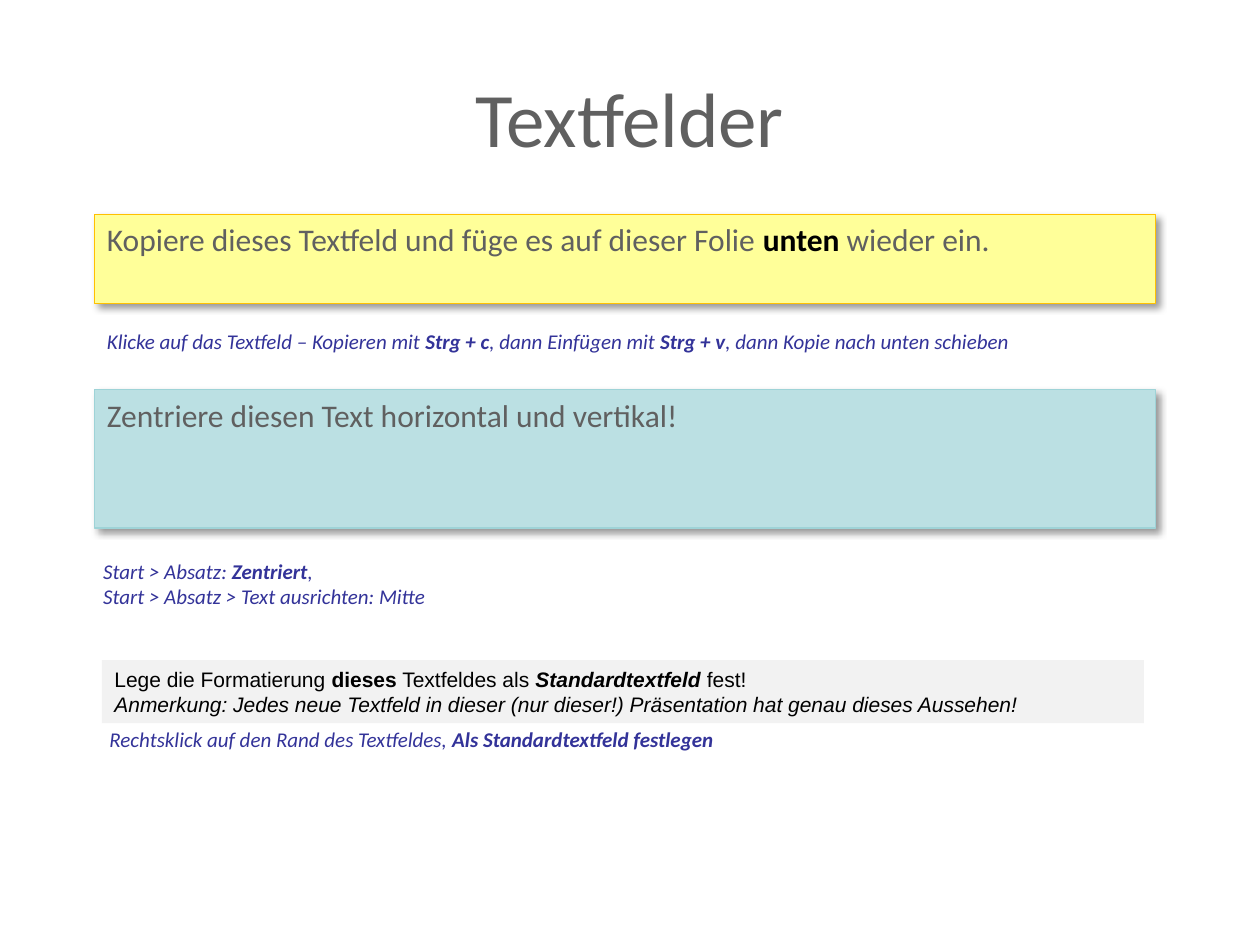
"""Builds the German exercise slide about text boxes."""
from dataclasses import dataclass

from lxml import etree
from pptx import Presentation
from pptx.dml.color import RGBColor
from pptx.enum.shapes import MSO_SHAPE
from pptx.enum.text import MSO_ANCHOR, PP_ALIGN
from pptx.oxml import parse_xml
from pptx.oxml.ns import nsdecls
from pptx.util import Inches, Pt

RECTANGLE = MSO_SHAPE.RECTANGLE
TOP, MIDDLE = MSO_ANCHOR.TOP, MSO_ANCHOR.MIDDLE
LEFT, CENTER = PP_ALIGN.LEFT, PP_ALIGN.CENTER
TITLE_ONLY = 5
COLUMNS, ROWS = 100, 75


@dataclass(frozen=True)
class Theme:
    """Colours, fonts and type sizes of the slide."""
    heading_font: str = "Calibri"
    plain_font: str = "Arial"
    title_size: int = 44
    task_size: int = 18
    hint_size: int = 12
    gray: str = "606060"
    black: str = "000000"
    hint: str = "333399"
    yellow: str = "FFFF99"
    amber: str = "FFC000"
    aqua: str = "BBE0E3"
    teal: str = "9ED3D7"
    pale: str = "F2F2F2"


class SlideBuilder:
    """Holds the theme and the current page and adds elements on a grid."""

    def __init__(self, deck, theme):
        """Open a page that has only a title."""
        self.deck, self.theme = deck, theme
        self.page = deck.slides.add_slide(deck.slide_layouts[TITLE_ONLY])

    def area(self, column, row, columns, rows):
        """Turn grid units into slide lengths."""
        cell_width = self.deck.slide_width / COLUMNS
        cell_height = self.deck.slide_height / ROWS
        return (round(column * cell_width), round(row * cell_height),
                round(columns * cell_width), round(rows * cell_height))

    def fill_text(self, box, spans, size, color, font=None, italic=False,
                  align=LEFT, anchor=TOP, strong_color=None):
        """Fill one paragraph with (text, style) spans; b is bold, i italic."""
        frame = box.text_frame
        frame.word_wrap, frame.vertical_anchor = True, anchor
        para = frame.paragraphs[0]
        para.alignment = align
        para.font.size, para.font.italic = Pt(size), italic
        para.font.name = font or self.theme.heading_font
        para.font.color.rgb = RGBColor.from_string(color)
        for text, style in spans:
            if text == "\n":
                para.add_line_break()
                continue
            span = para.add_run()
            span.text = text
            if "b" in style:
                span.font.bold = True
                if strong_color:
                    span.font.color.rgb = RGBColor.from_string(strong_color)
            if "i" in style:
                span.font.italic = True

    def title(self, area, text):
        """Place and format the title placeholder."""
        box = self.page.shapes.title
        box.left, box.top, box.width, box.height = self.area(*area)
        self.fill_text(box, [(text, "")], self.theme.title_size, self.theme.gray,
                       align=CENTER, anchor=MIDDLE)

    def panel(self, area, fill, line=None):
        """Add a filled rectangle, outlined if a line colour is given."""
        box = self.page.shapes.add_shape(RECTANGLE, *self.area(*area))
        box.shadow.inherit = False
        box.fill.solid()
        box.fill.fore_color.rgb = RGBColor.from_string(fill)
        if line:
            box.line.color.rgb = RGBColor.from_string(line)
            box.line.width = Pt(0.75)
        else:
            box.line.fill.background()
        return box

    def task(self, area, fill, line, spans):
        """Add an outlined task panel with a soft shadow."""
        box = self.panel(area, fill, line)
        effects = box.element.spPr.find("{*}effectLst")
        shadow = parse_xml(
            f'<a:outerShdw {nsdecls("a")} blurRad="{Pt(4)}" dist="{Pt(3)}" '
            f'dir="{45 * 60000}" algn="tl" rotWithShape="0"/>')
        color = etree.SubElement(shadow, shadow.tag.replace("outerShdw", "srgbClr"),
                                 val=self.theme.black)
        etree.SubElement(color, shadow.tag.replace("outerShdw", "alpha"), val="40000")
        effects.append(shadow)
        self.fill_text(box, spans, self.theme.task_size, self.theme.gray,
                       strong_color=self.theme.black)

    def note(self, area, spans):
        """Add a pale panel in the plain font."""
        box = self.panel(area, self.theme.pale)
        self.fill_text(box, spans, self.theme.hint_size, self.theme.black,
                       font=self.theme.plain_font)

    def hint(self, area, spans):
        """Add an italic hint without a background."""
        box = self.page.shapes.add_textbox(*self.area(*area))
        self.fill_text(box, spans, self.theme.hint_size, self.theme.hint, italic=True)


def main():
    """Build and save the deck."""
    deck = Presentation()
    deck.slide_width, deck.slide_height = Inches(10), Inches(7.5)
    theme = Theme()
    slide = SlideBuilder(deck, theme)
    slide.title((5, 3, 90, 12.5), "Textfelder")
    slide.task((7.5, 17, 84.2, 7.1), theme.yellow, theme.amber, [
        ("Kopiere dieses Textfeld und füge es auf dieser Folie ", ""),
        ("unten", "b"), (" wieder ein.", "")])
    slide.task((7.5, 30.9, 84.2, 11), theme.aqua, theme.teal, [
        ("Zentriere diesen Text horizontal und vertikal!", "")])
    slide.hint((7.2, 43.8, 74.8, 5), [
        ("Start > Absatz: ", ""), ("Zentriert", "b"), (",", ""), ("\n", ""),
        ("Start > Absatz > Text ausrichten: Mitte", "")])
    slide.hint((7.5, 25.6, 83.5, 3), [
        ("Klicke auf das Textfeld – Kopieren mit ", ""), ("Strg + c", "b"),
        (", dann Einfügen mit ", ""), ("Strg + v", "b"),
        (", dann Kopie nach unten schieben", "")])
    slide.note((8.1, 52.4, 82.7, 5), [
        ("Lege die Formatierung ", ""), ("dieses", "b"),
        (" Textfeldes als ", ""), ("Standardtextfeld", "bi"),
        (" fest! ", ""), ("\n", ""),
        ("Anmerkung: Jedes neue Textfeld in dieser (nur dieser!) "
         "Präsentation hat genau dieses Aussehen!", "i")])
    slide.hint((7.7, 57.2, 74.8, 3), [
        ("Rechtsklick auf den Rand des Textfeldes, ", ""),
        ("Als Standardtextfeld festlegen", "b")])
    deck.save("out.pptx")


if __name__ == "__main__":
    main()
